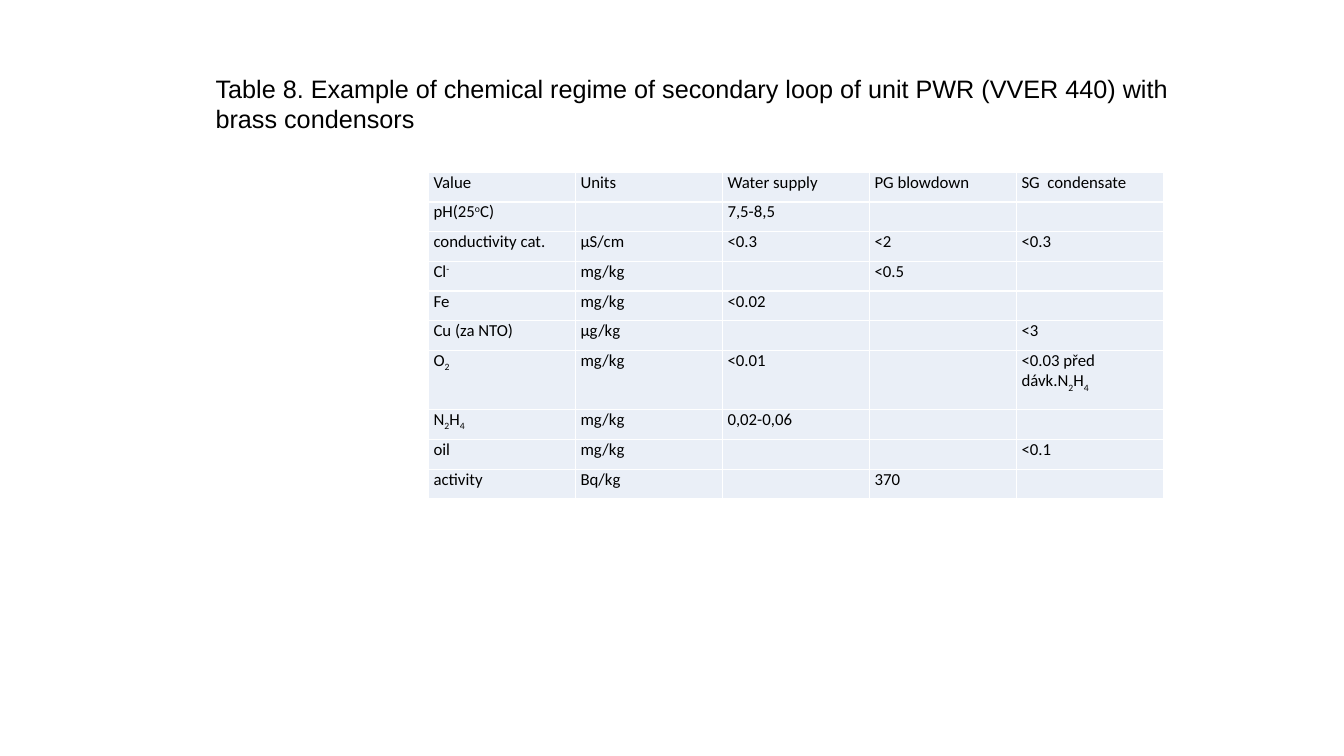
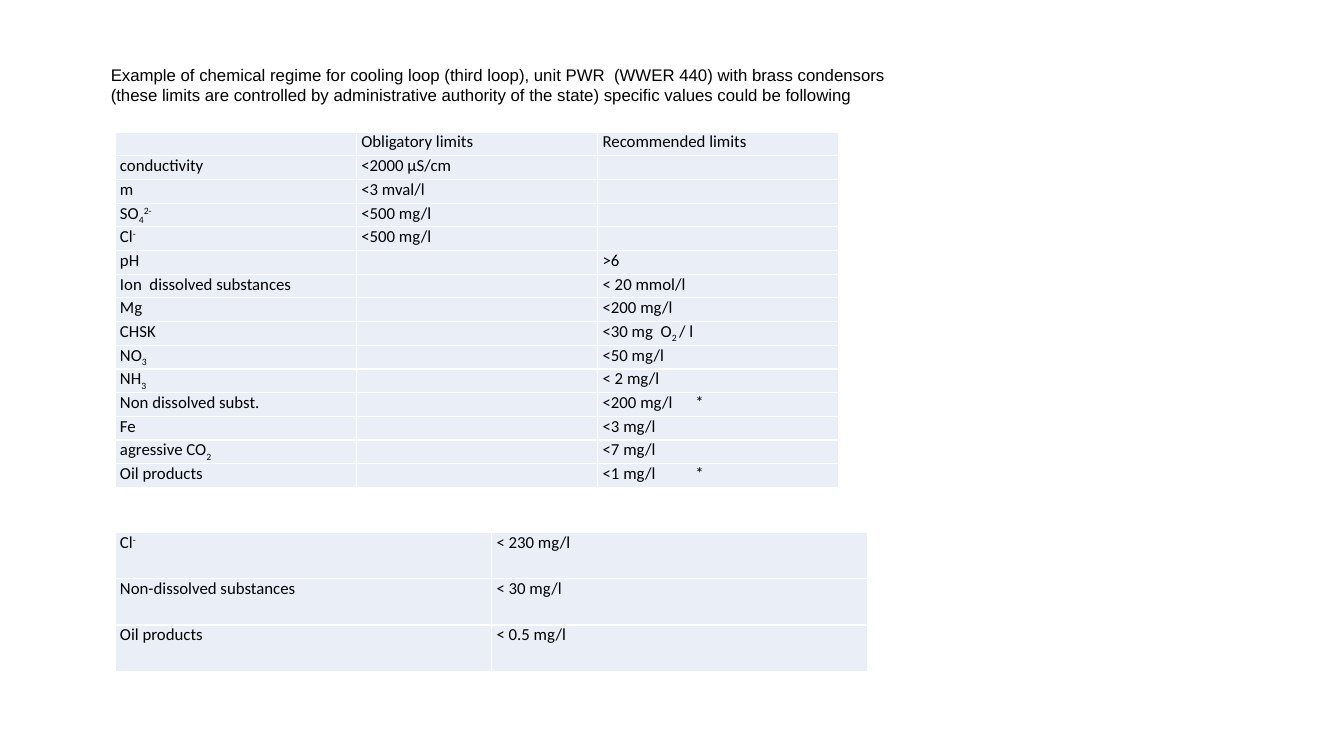
"""Build two slides of chemical regime limits for a PWR unit."""
from dataclasses import dataclass

from lxml.etree import SubElement
from pptx import Presentation
from pptx.dml.color import RGBColor
from pptx.enum.text import MSO_ANCHOR, PP_ALIGN
from pptx.oxml.ns import qn
from pptx.slide import Slide
from pptx.table import _Cell
from pptx.util import Inches, Pt

COLORS = {"text": "000000", "cell": "EAEFF7", "border": "FFFFFF"}
TITLE_FONT = "Arial"
TABLE_FONT = "Calibri"
TABLE_SIZE = 12
BASELINES = {"_": "-25000", "^": "30000"}


@dataclass(frozen=True)
class Box:
    left: float
    top: float
    width: float
    height: float


@dataclass(frozen=True)
class Title:
    box: Box
    size: int
    lines: tuple[str, ...]


@dataclass(frozen=True)
class TableBlock:
    """Rows of cells; "|_" opens a subscript run, "|^" a superscript run, "|" a plain run."""
    box: Box
    rows: tuple[tuple[str, ...], ...]
    alignment: PP_ALIGN = PP_ALIGN.JUSTIFY
    double_row: int | None = None
    tab_stop: float = 0.92


SECONDARY_TITLE = Title(
    Box(2.04, 0.68, 10.1, 0.7), 18,
    ("Table 8. Example of chemical regime of secondary loop of unit PWR (VVER 440) with brass condensors",),
)
SECONDARY_LIMITS = TableBlock(
    Box(4.25, 1.71, 7.29, 3.24),
    (
        ("Value", "Units", "Water supply", "PG blowdown", "SG  condensate"),
        ("pH(25|^o|C)", "", "7,5-8,5", "", ""),
        ("conductivity cat.", "μS/cm", "<0.3", "<2", "<0.3"),
        ("Cl|^-", "mg/kg", "", "<0.5", ""),
        ("Fe", "mg/kg", "<0.02", "", ""),
        ("Cu (za NTO)", "μg/kg", "", "", "<3"),
        ("O|_2", "mg/kg", "<0.01", "", "<0.03 před dávk.N|_2|H|_4"),
        ("N|_2|H|_4", "mg/kg", "0,02-0,06", "", ""),
        ("oil", "mg/kg", "", "", "<0.1"),
        ("activity", "Bq/kg", "", "370", ""),
    ),
    alignment=PP_ALIGN.LEFT,
    double_row=6,
)
COOLING_TITLE = Title(
    Box(1, 0.54, 8.15, 0.6), 12,
    (
        "Example of chemical regime for cooling loop (third loop), unit PWR  (WWER 440) with brass condensors",
        "(these limits are controlled by administrative authority of the state) specific values could be following",
    ),
)
COOLING_LIMITS = TableBlock(
    Box(1.14, 1.31, 7.18, 3.53),
    (
        ("", "Obligatory limits", "Recommended limits"),
        ("conductivity", "<2000 μS/cm", ""),
        ("m", "<3 mval/l", ""),
        ("SO|_4|^2-", "<500 mg/l", ""),
        ("Cl|^-", "<500 mg/l", ""),
        ("pH", "", ">6"),
        ("Ion  dissolved substances", "", "< 20 mmol/l"),
        ("Mg", "", "<200 mg/l"),
        ("CHSK", "", "<30 mg  O|_2 |/ l"),
        ("NO|_3", "", "<50 mg/l"),
        ("NH|_3", "", "< 2 mg/l"),
        ("Non dissolved subst.", "", "<200 mg/l\t*"),
        ("Fe", "", "<3 mg/l"),
        ("agressive CO|_2", "", "<7 mg/l"),
        ("Oil products", "", "<1 mg/l\t*"),
    ),
)
SPECIFIC_LIMITS = TableBlock(
    Box(1.14, 5.28, 7.47, 1.38),
    (
        ("Cl|^-", "< 230 mg/l"),
        ("Non-dissolved substances", "< 30 mg/l"),
        ("Oil products", "< 0.5 mg/l"),
    ),
)
SLIDES = (
    (SECONDARY_TITLE, (SECONDARY_LIMITS,)),
    (COOLING_TITLE, (COOLING_LIMITS, SPECIFIC_LIMITS)),
)


def lengths(box: Box) -> tuple[Inches, ...]:
    return tuple(Inches(value) for value in (box.left, box.top, box.width, box.height))


def add_run(paragraph, text: str, font_name: str, size: int, baseline: str | None = None) -> None:
    run = paragraph.add_run()
    run.text = text
    run.font.name = font_name
    run.font.size = Pt(size)
    run.font.color.rgb = RGBColor.from_string(COLORS["text"])
    if baseline:
        run.font._element.set("baseline", baseline)


def add_title(slide: Slide, title: Title) -> None:
    frame = slide.shapes.add_textbox(*lengths(title.box)).text_frame
    frame.word_wrap = True
    frame.vertical_anchor = MSO_ANCHOR.MIDDLE
    for index, line in enumerate(title.lines):
        paragraph = frame.add_paragraph() if index else frame.paragraphs[0]
        add_run(paragraph, line, TITLE_FONT, title.size)


def style_cell(cell: _Cell) -> None:
    cell.margin_left = cell.margin_right = Inches(0.05)
    cell.margin_top = cell.margin_bottom = Inches(0)
    properties = cell._tc.get_or_add_tcPr()
    for side in ("L", "R", "T", "B"):
        border = SubElement(properties, qn(f"a:ln{side}"), w=str(Pt(1)))
        fill = SubElement(border, qn("a:solidFill"))
        SubElement(fill, qn("a:srgbClr"), val=COLORS["border"])
    cell.fill.solid()
    cell.fill.fore_color.rgb = RGBColor.from_string(COLORS["cell"])


def write_cell(cell: _Cell, text: str, block: TableBlock) -> None:
    paragraph = cell.text_frame.paragraphs[0]
    paragraph.alignment = block.alignment
    if "\t" in text:
        tabs = SubElement(paragraph._p.get_or_add_pPr(), qn("a:tabLst"))
        SubElement(tabs, qn("a:tab"), pos=str(Inches(block.tab_stop)), algn="l")
    if not text:
        SubElement(paragraph._p, qn("a:endParaRPr"), sz=str(TABLE_SIZE * 100))
        return
    for part in text.split("|"):
        baseline = BASELINES.get(part[0])
        add_run(paragraph, part[1:] if baseline else part, TABLE_FONT, TABLE_SIZE, baseline)


def add_table(slide: Slide, block: TableBlock) -> None:
    row_count, column_count = len(block.rows), len(block.rows[0])
    table = slide.shapes.add_table(row_count, column_count, *lengths(block.box)).table
    table.first_row = table.horz_banding = False
    for column in table.columns:
        column.width = Inches(block.box.width / column_count)
    weights = [2 if index == block.double_row else 1 for index in range(row_count)]
    for row, weight, texts in zip(table.rows, weights, block.rows):
        row.height = Inches(block.box.height * weight / sum(weights))
        for cell, text in zip(row.cells, texts):
            style_cell(cell)
            write_cell(cell, text, block)


def main() -> None:
    presentation = Presentation()
    presentation.slide_width = Inches(13.33)
    presentation.slide_height = Inches(7.5)
    for title, blocks in SLIDES:
        slide = presentation.slides.add_slide(presentation.slide_layouts[6])
        for block in blocks:
            add_table(slide, block)
        add_title(slide, title)
    presentation.save("out.pptx")


if __name__ == "__main__":
    main()
